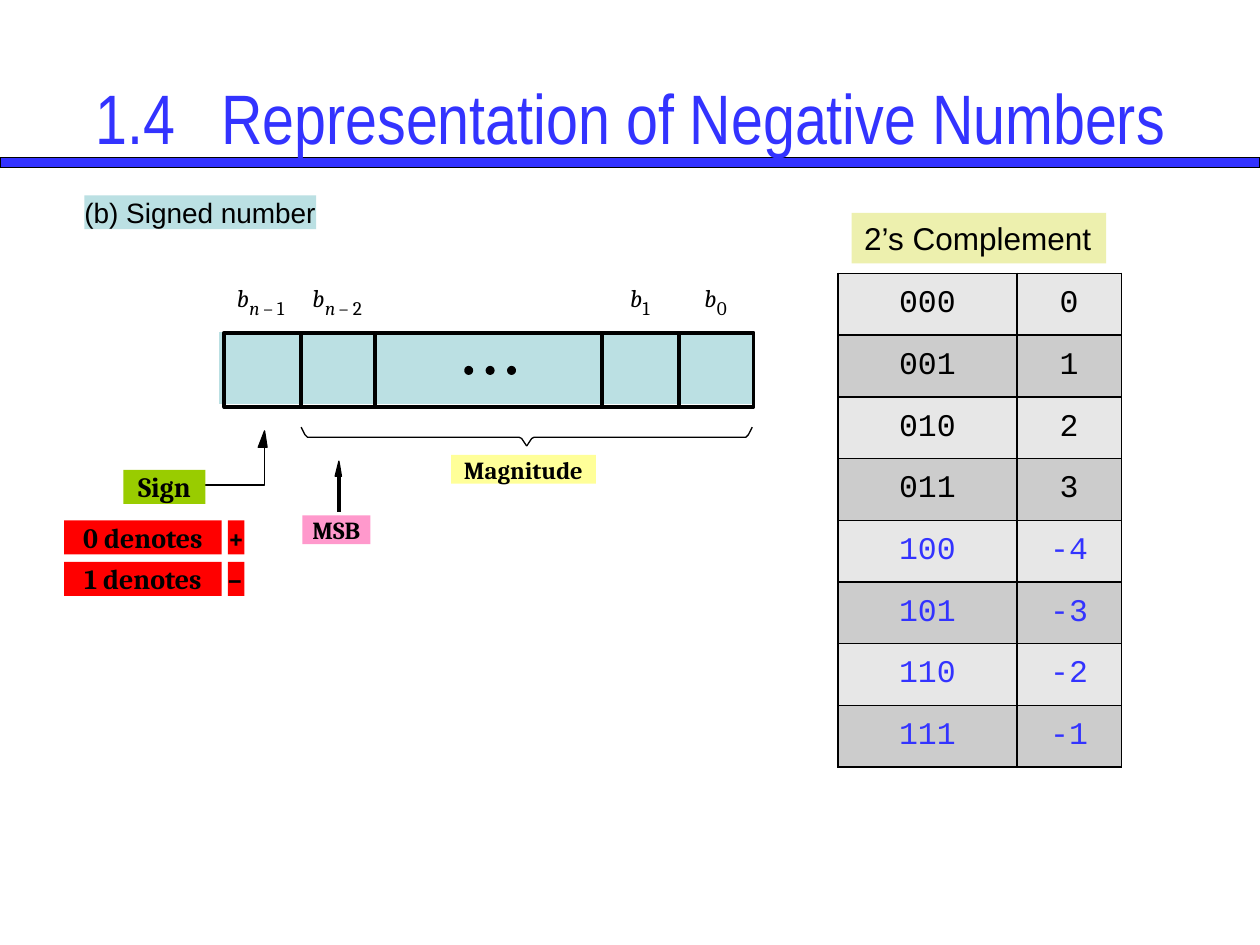
"""Build a slide on signed numbers with a register diagram and a two's complement table."""
from lxml import etree
from pptx import Presentation
from pptx.dml.color import RGBColor
from pptx.enum.shapes import MSO_CONNECTOR as Connector, MSO_SHAPE as Preset
from pptx.enum.text import MSO_ANCHOR as Anchor, PP_ALIGN as Align
from pptx.oxml import parse_xml
from pptx.oxml.ns import nsdecls, qn
from pptx.util import Inches, Pt

BLACK, WHITE, BLUE, TEAL, RED = "000000", "FFFFFF", "3333FF", "BBE0E3", "FF0000"
SERIF, SANS = "Cambria", "Arial"


def color(value):
    return RGBColor.from_string(value)


class SlideBuilder:
    def __init__(self, presentation):
        self.slide = presentation.slides.add_slide(presentation.slide_layouts[6])
        self.shapes = self.slide.shapes

    def paint(self, shape, fill=None, line=None, width=0.0):
        shape.shadow.inherit = False
        if fill:
            shape.fill.solid()
            shape.fill.fore_color.rgb = color(fill)
        else:
            shape.fill.background()
        if line:
            shape.line.color.rgb = color(line)
            shape.line.width = Pt(width)
        else:
            shape.line.fill.background()
        return shape

    def shape(self, left, top, width, height, fill=None, line=None,
              line_width=0.0, preset=Preset.RECTANGLE):
        box = [Inches(value) for value in (left, top, width, height)]
        return self.paint(self.shapes.add_shape(preset, *box), fill, line, line_width)

    def add_text_run(self, paragraph, text, size, font, ink=BLACK, align=Align.LEFT,
                     bold=False, italic=False):
        paragraph.alignment = align
        run = paragraph.add_run()
        run.text = text
        run.font.size, run.font.name = Pt(size), font
        run.font.bold, run.font.italic = bold, italic
        run.font.color.rgb = color(ink)

    def text(self, left, top, width, height, text, size, font, fill=None,
             insets=(0, 0), wrap=False, anchor=Anchor.TOP, **style):
        if fill:
            shape = self.shape(left, top, width, height, fill)
        else:
            shape = self.shapes.add_textbox(
                Inches(left), Inches(top), Inches(width), Inches(height))
        frame = shape.text_frame
        frame.word_wrap, frame.vertical_anchor = wrap, anchor
        frame.margin_left = frame.margin_right = Inches(insets[0])
        frame.margin_top = frame.margin_bottom = Inches(insets[1])
        self.add_text_run(frame.paragraphs[0], text, size, font, **style)
        return shape

    def tag(self, left, top, width, text, size, fill):
        height = 0.27 if size == 16 else 0.23
        self.text(left, top, width, height, text, size, SERIF, fill,
                  wrap=True, align=Align.CENTER, bold=True)

    def bit_name(self, left, subscript):
        self.text(left, 2.25, 0.11, 0.23, "b", 14, SERIF, italic=True)
        for index, symbol in enumerate(subscript):
            self.text(left + 0.1 + 0.11 * index, 2.35, 0.09, 0.18, symbol, 11,
                      SERIF, italic=symbol.isalpha())

    def outline(self, points, fill=None):
        corners = [(Inches(x), Inches(y)) for x, y in points]
        builder = self.shapes.build_freeform(*corners[0])
        builder.add_line_segments(corners[1:], close=bool(fill))
        self.paint(builder.convert_to_shape(), fill, BLACK)

    def line(self, start, end):
        connector = self.shapes.add_connector(
            Connector.STRAIGHT, *[Inches(value) for value in (*start, *end)])
        connector.line.color.rgb = color(BLACK)
        connector.line.width = Pt(0)
        etree.SubElement(connector._element.spPr, qn("a:effectLst"))

    def table(self, left, top, widths, row_height, rows):
        table = self.shapes.add_table(
            len(rows), len(widths), Inches(left), Inches(top),
            Inches(sum(widths)), Inches(row_height * len(rows))).table
        table.first_row = False
        for column, width in zip(table.columns, widths):
            column.width = Inches(width)
        for index, values in enumerate(rows):
            ink = BLUE if values[1].startswith("-") else BLACK
            for column, value in enumerate(values):
                cell = table.cell(index, column)
                cell.vertical_anchor = Anchor.MIDDLE
                self.add_text_run(cell.text_frame.paragraphs[0], value, 18,
                                  "Courier New", ink, Align.CENTER)
                self.border(cell)
                cell.fill.solid()
                cell.fill.fore_color.rgb = color("CCCCCC" if index % 2 else "E7E7E7")

    def border(self, cell):
        properties = cell._tc.get_or_add_tcPr()
        for side in ("lnL", "lnR", "lnT", "lnB"):
            properties.append(parse_xml(
                f'<a:{side} {nsdecls("a")} w="12700"><a:solidFill>'
                f'<a:srgbClr val="{BLACK}"/></a:solidFill></a:{side}>'))


def main():
    presentation = Presentation()
    presentation.slide_width, presentation.slide_height = Inches(10), Inches(7.5)
    page = SlideBuilder(presentation)

    page.shape(0, 1.25, 10, 0.08, BLUE, BLACK, 0.75)
    page.text(0.5, 0.3, 9, 1.25, "1.4\tRepresentation of Negative Numbers", 40,
              "Arial Narrow", insets=(0.1, 0.05), wrap=True, anchor=Anchor.MIDDLE,
              ink=BLUE, align=Align.CENTER)
    page.text(0.67, 1.55, 1.84, 0.27, "(b) Signed number", 16, SANS, TEAL)

    page.shape(1.73, 2.63, 4.25, 0.58, TEAL, WHITE, 0.75)
    edges = [1.78, 2.39, 2.98, 4.78, 5.39, 5.98]
    for left, right in zip(edges, edges[1:]):
        page.shape(left, 2.64, right - left, 0.59, line=BLACK, line_width=2.25)
    for index in range(3):
        page.shape(3.7 + 0.17 * index, 2.92, 0.04, 0.04, BLACK, BLACK, 2.25, Preset.OVAL)
    for left, subscript in ((1.88, "n–1"), (2.48, "n–2"), (5, "1"), (5.59, "0")):
        page.bit_name(left, subscript)

    middle = 4.18
    for side in (-1, 1):
        page.outline([(middle + side * reach, y) for reach, y in (
            (1.79, 3.39), (1.76, 3.45), (1.74, 3.47), (0.06, 3.47), (0.04, 3.48), (0, 3.54))])
    page.outline([(1.63, 3.85), (2.1, 3.85), (2.1, 3.55)])
    page.outline([(2.12, 3.55), (2.1, 3.42), (2.05, 3.55)], BLACK)
    page.line((2.69, 4.06), (2.69, 3.78))
    page.outline([(2.71, 3.78), (2.69, 3.66), (2.66, 3.78)], BLACK)

    page.tag(3.58, 3.61, 1.15, "Magnitude", 14, "FFFF99")
    page.tag(0.98, 3.73, 0.65, "Sign", 16, "99CC00")
    page.tag(2.4, 4.09, 0.54, "MSB", 14, "FF99CC")
    for top, digit, sign in ((4.13, "0", "+"), (4.46, "1", "–")):
        page.tag(0.51, top, 1.25, f"{digit} denotes", 16, RED)
        page.text(1.81, top, 0.13, 0.27, sign, 16, SERIF, RED, bold=True)

    rows = [(f"{number:03b}", str(number - 8 if number > 3 else number))
            for number in range(8)]
    page.table(6.65, 2.17, (1.42, 0.83), 0.49, rows)
    page.text(6.76, 1.69, 2.02, 0.4, "2’s Complement", 18, SANS, "EDF0AE",
              insets=(0.1, 0.05))
    presentation.save("out.pptx")


if __name__ == "__main__":
    main()
